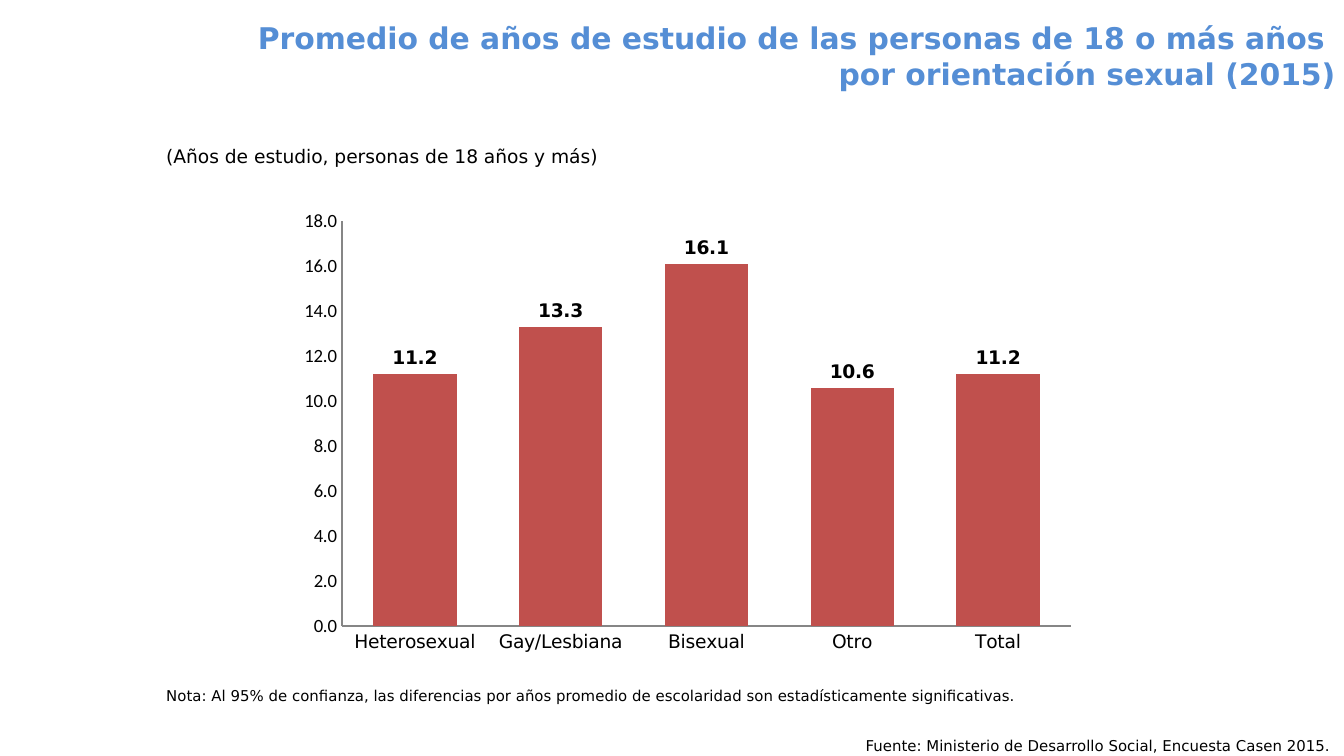
from lxml import etree
from pptx import Presentation
from pptx import util as u
from pptx.chart.data import CategoryChartData
from pptx.dml.color import RGBColor
from pptx.enum import chart as ch, shapes, text
from pptx.oxml.ns import qn

PX = 6804  # EMU per px
FONT = "DejaVu Sans"
COLORS = {"title": "558ED5", "ink": "000000", "bar": "C0504D",
          "axis": "868686", "paper": "FFFFFF"}

TITLE = ["Promedio de años de estudio de las personas de 18 o más años ",
         "por orientación sexual (2015)"]
UNITS = "(Años de estudio, personas de 18 años y más)"
NOTE = ("Nota: Al 95% de confianza, las diferencias por años promedio de "
        "escolaridad son estadísticamente significativas.")
SOURCE = "Fuente: Ministerio de Desarrollo Social, Encuesta Casen 2015."
YEARS = {"Heterosexual": 11.2, "Gay/Lesbiana": 13.3, "Bisexual": 16.1,
         "Otro": 10.6, "Total": 11.2}

LEFT = 153
CHART = (286, 203, 801, 460)
PLOT = {"x": 0.07, "y": 0.04, "w": 0.91, "h": 0.88}


def color(name):
    return RGBColor.from_string(COLORS[name])


def scale(box):
    return [u.Emu(v * PX) for v in box]


def style(font, size=10, face=FONT, bold=False, ink="ink"):
    font.size, font.name, font.bold = u.Pt(size), face, bold
    font.color.rgb = color(ink)


def write(slide, box, lines, right=False, fill=None, **look):
    """Place lines of text, on a filled rectangle when fill is given."""
    if fill:
        shape = slide.shapes.add_shape(shapes.MSO_SHAPE.RECTANGLE, *scale(box))
        shape.shadow.inherit = False
        shape.fill.solid()
        shape.fill.fore_color.rgb = color(fill)
        shape.line.fill.background()
    else:
        shape = slide.shapes.add_textbox(*scale(box))
    frame = shape.text_frame
    frame.word_wrap = True
    frame.vertical_anchor = text.MSO_ANCHOR.TOP
    for i, line in enumerate(lines):
        para = frame.add_paragraph() if i else frame.paragraphs[0]
        para.alignment = text.PP_ALIGN.RIGHT if right else text.PP_ALIGN.LEFT
        run = para.add_run()
        run.text = line
        style(run.font, **look)


def set_plot(chart):
    """Fix the inner plot area at the fractions in PLOT."""
    area = chart._chartSpace.chart.plotArea
    for old in area.findall(qn("c:layout")):
        area.remove(old)
    layout = etree.Element(qn("c:layout"))
    area.insert(0, layout)
    manual = etree.SubElement(layout, qn("c:manualLayout"))
    rules = [("layoutTarget", "inner"), ("xMode", "edge"), ("yMode", "edge")]
    for tag, val in rules + list(PLOT.items()):
        etree.SubElement(manual, qn("c:" + tag)).set("val", str(val))


def add_bars(slide):
    data = CategoryChartData(number_format="###0.0")
    data.categories = list(YEARS)
    data.add_series("Series 1", list(YEARS.values()))
    chart = slide.shapes.add_chart(
        ch.XL_CHART_TYPE.COLUMN_CLUSTERED, *scale(CHART), data).chart
    chart.has_legend = chart.has_title = False
    style(chart.font, face="Calibri")

    for axis, face in ((chart.category_axis, FONT),
                       (chart.value_axis, "Calibri")):
        axis.has_major_gridlines = False
        axis.major_tick_mark = axis.minor_tick_mark = ch.XL_TICK_MARK.NONE
        axis.format.line.color.rgb = color("axis")
        axis.format.line.width = u.Pt(0.75)
        style(axis.tick_labels.font, face=face)
    values = chart.value_axis
    values.minimum_scale, values.maximum_scale, values.major_unit = 0, 18, 2
    values.tick_labels.number_format = "###0.0"
    values.tick_labels.number_format_is_linked = False

    plot = chart.plots[0]
    plot.gap_width = 75
    plot.vary_by_categories = False
    bars = plot.series[0]
    bars.format.fill.solid()
    bars.format.fill.fore_color.rgb = color("bar")
    labels = bars.data_labels
    labels.show_value = True
    labels.position = ch.XL_LABEL_POSITION.OUTSIDE_END
    labels.number_format = "###0.0"
    labels.number_format_is_linked = False
    style(labels.font, bold=True)
    set_plot(chart)


def main():
    deck = Presentation()
    deck.slide_width, deck.slide_height = scale((1344, 756))
    slide = deck.slides.add_slide(deck.slide_layouts[6])
    write(slide, (LEFT, 13, 1196, 149), TITLE, right=True,
          size=16, bold=True, ink="title")
    write(slide, (645, 730, 699, 23), [SOURCE], right=True,
          fill="paper", size=8)
    add_bars(slide)
    write(slide, (LEFT, 680, 1050, 32), [NOTE], size=8)
    write(slide, (LEFT, 138, 477, 36), [UNITS])
    deck.save("out.pptx")


if __name__ == "__main__":
    main()
